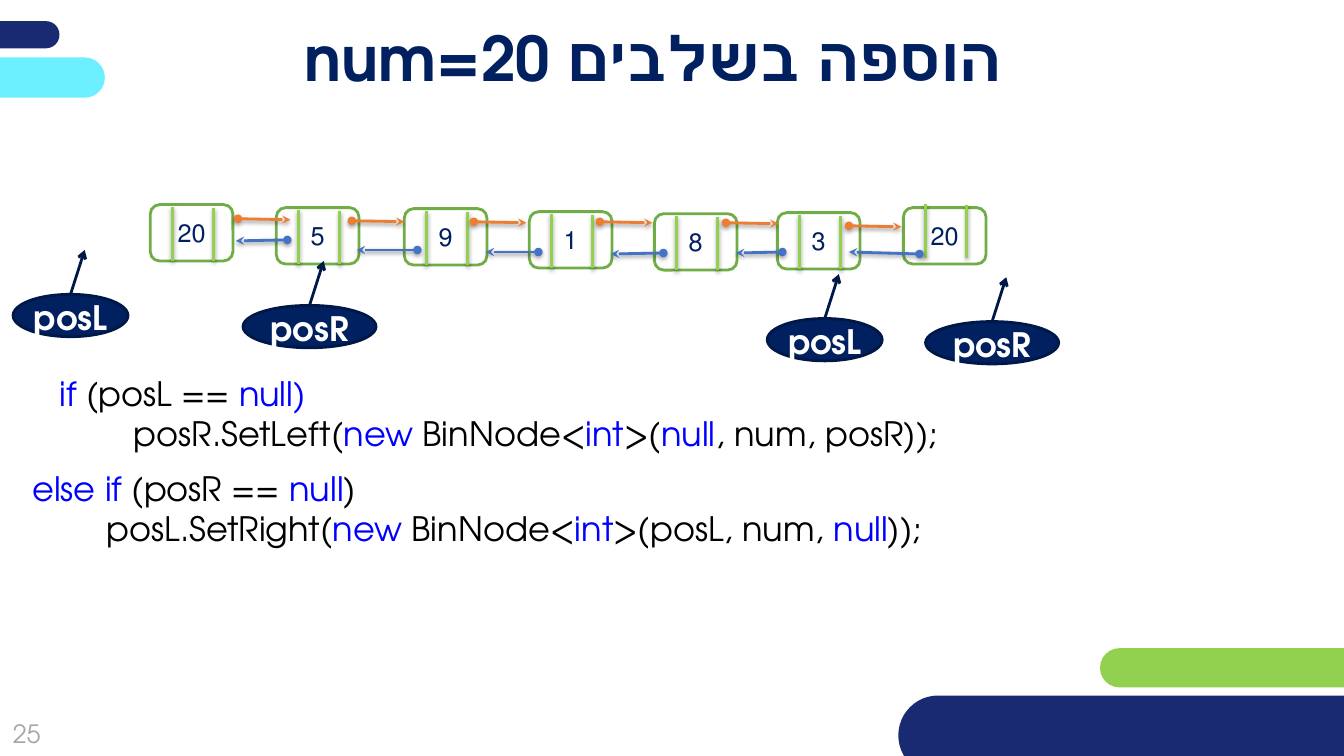
from lxml import etree
from pptx import Presentation
from pptx.dml.color import RGBColor
from pptx.enum import shapes, text
from pptx.oxml import ns
from pptx.util import Inches, Pt

FONT = "TeX Gyre Adventor"
WHITE = RGBColor(255, 255, 255)
BLACK = RGBColor(0, 0, 0)
GREY = RGBColor(0xA6, 0xA6, 0xA6)
NAVY = RGBColor(0x00, 0x20, 0x60)
DEEP = RGBColor(0x00, 0x18, 0x47)
INDIGO = RGBColor(0x19, 0x2A, 0x72)
CYAN = RGBColor(0x6C, 0xF0, 0xFF)
LIME = RGBColor(0x92, 0xD0, 0x50)
GREEN = RGBColor(0x70, 0xAD, 0x47)
ORANGE = RGBColor(0xED, 0x7D, 0x31)
BLUE = RGBColor(0x44, 0x72, 0xC4)
KEY = RGBColor(0, 0, 255)

prs = Presentation()
prs.slide_width, prs.slide_height = Inches(13.33), Inches(7.5)
slide = prs.slides.add_slide(prs.slide_layouts[5])


def label(shape, words, size, color, bold=False, rtl=True):
    frame = shape.text_frame
    frame.word_wrap = True
    frame.vertical_anchor = text.MSO_ANCHOR.MIDDLE
    para = frame.paragraphs[0]
    para.text = words
    para.alignment = text.PP_ALIGN.CENTER
    if rtl:
        para._p.get_or_add_pPr().set("rtl", "1")
    font = para.font
    font.name, font.size, font.bold = FONT, Pt(size), bold
    font.color.rgb = color
    return para


def stroke(x1, y1, x2, y2, color, head=None, tail=None, shadow=True):
    """Draw a straight line with optional arrowheads and a soft shadow."""
    line = slide.shapes.add_connector(
        shapes.MSO_CONNECTOR.STRAIGHT,
        Inches(x1), Inches(y1), Inches(x2), Inches(y2))
    line.line.color.rgb = color
    line.line.width = Pt(2)
    ln = line.line._get_or_add_ln()
    for tag, kind in (("a:headEnd", head), ("a:tailEnd", tail)):
        if kind:
            etree.SubElement(ln, ns.qn(tag), type=kind)
    fx = etree.SubElement(line._element.spPr, ns.qn("a:effectLst"))
    if shadow:
        outer = etree.SubElement(
            fx, ns.qn("a:outerShdw"), blurRad=str(Pt(3.1)),
            dist=str(Pt(1.6)), dir="5400000", rotWithShape="0")
        tint = etree.SubElement(outer, ns.qn("a:srgbClr"), val="000000")
        etree.SubElement(tint, ns.qn("a:alpha"), val="38000")
    return line


# Corner bars
for x, y, w, h, color in (
        (-2.66, 0.21, 3.25, 0.27, INDIGO), (10.91, 6.43, 5.21, 0.39, LIME),
        (-2.21, 0.57, 3.25, 0.4, CYAN), (8.91, 6.9, 5.66, 0.79, INDIGO)):
    bar = slide.shapes.add_shape(
        shapes.MSO_SHAPE.ROUNDED_RECTANGLE,
        Inches(x), Inches(y), Inches(w), Inches(h))
    bar.adjustments[0] = 0.5
    bar.shadow.inherit = False
    bar.fill.solid()
    bar.fill.fore_color.rgb = color
    bar.line.fill.background()

# Title and page number
title = slide.shapes.title
title.left, title.top = Inches(1.12), Inches(0.17)
title.width, title.height = Inches(10.72), Inches(0.79)
label(title, "הוספה בשלבים num=20", 44, NAVY, bold=True)
page = slide.shapes.add_textbox(
    Inches(-0.18), Inches(6.99), Inches(0.89), Inches(0.57))
label(page, "25", 18, GREY, rtl=False)

# List nodes: value, left, top, top of the dividers
for value, x, y, top in (
        ("20", 1.49, 2.03, 2.05), ("5", 2.74, 2.06, 2.08),
        ("9", 4.01, 2.07, 2.09), ("1", 5.25, 2.1, 2.12),
        ("8", 6.49, 2.12, 2.14), ("3", 7.71, 2.11, 2.13),
        ("20", 8.96, 2.06, 2.02)):
    node = slide.shapes.add_shape(
        shapes.MSO_SHAPE.ROUNDED_RECTANGLE,
        Inches(x), Inches(y), Inches(0.82), Inches(0.56))
    node.shadow.inherit = False
    node.fill.solid()
    node.fill.fore_color.rgb = WHITE
    node.line.color.rgb = GREEN
    node.line.width = Pt(2)
    frame = node.text_frame
    frame.margin_left = frame.margin_right = 0
    frame.margin_top = frame.margin_bottom = 0
    label(node, value, 18, NAVY)
    stroke(x + 0.63, top + 0.01, x + 0.63, top + 0.54, LIME)
    stroke(x + 0.22, top, x + 0.22, top + 0.54, LIME)

# Links to the next node, then back to the previous one
for x, y in ((2.36, 2.17), (3.49, 2.19), (4.7, 2.2), (5.95, 2.2),
             (7.2, 2.21), (8.42, 2.24)):
    stroke(x, y, x + 0.52, y + 0.01, ORANGE, "oval", "stealth")
for x1, y1, x2, y2 in (
        (2.85, 2.38, 2.34, 2.39), (4.14, 2.48, 3.54, 2.48),
        (5.34, 2.5, 4.82, 2.5), (6.58, 2.51, 6.06, 2.52),
        (7.76, 2.5, 7.3, 2.51), (9.12, 2.52, 8.42, 2.5)):
    stroke(x1, y1, x2, y2, BLUE, "oval", "stealth")

# Position pointers
for name, x, y, w in (("posR", 2.41, 3.03, 1.32), ("posL", 0.13, 2.92, 1.14),
                      ("posR", 9.18, 3.19, 1.32), ("posL", 7.61, 3.16, 1.14)):
    oval = slide.shapes.add_shape(
        shapes.MSO_SHAPE.OVAL, Inches(x), Inches(y), Inches(w), Inches(0.42))
    oval.shadow.inherit = False
    oval.fill.solid()
    oval.fill.fore_color.rgb = NAVY
    oval.line.color.rgb = DEEP
    oval.line.width = Pt(2)
    frame = oval.text_frame
    frame.margin_left = frame.margin_right = 0
    frame.margin_top = frame.margin_bottom = 0
    para = label(oval, name, 24, WHITE, bold=True)
    para.line_spacing = 1.07
    para.space_after = Pt(8)
    mid = x + w / 2
    arrow = stroke(mid, y, mid + 0.14, y - 0.44, DEEP,
                   tail="arrow", shadow=False)
    arrow.begin_connect(oval, 0)

# Code: every second part between bars is a keyword
for x, y, w, code in (
        (0.4, 3.65, 9.01, (
            "| if| (posL == |null)",
            "         posR.SetLeft(|new |BinNode<|int|>(|null|, num, posR));")),
        (0.13, 4.59, 9.28, (
            " |else if| (posR == |null|)",
            "         posL.SetRight(|new |BinNode<|int|>(posL, num, |null|));"))):
    box = slide.shapes.add_textbox(
        Inches(x), Inches(y), Inches(w), Inches(0.91))
    frame = box.text_frame
    frame.word_wrap = True
    for row, words in enumerate(code):
        para = frame.add_paragraph() if row else frame.paragraphs[0]
        para.font.name, para.font.size = FONT, Pt(24)
        for i, part in enumerate(words.split("|")):
            if part:
                run = para.add_run()
                run.text = part
                run.font.color.rgb = KEY if i % 2 else BLACK

prs.save("out.pptx")
